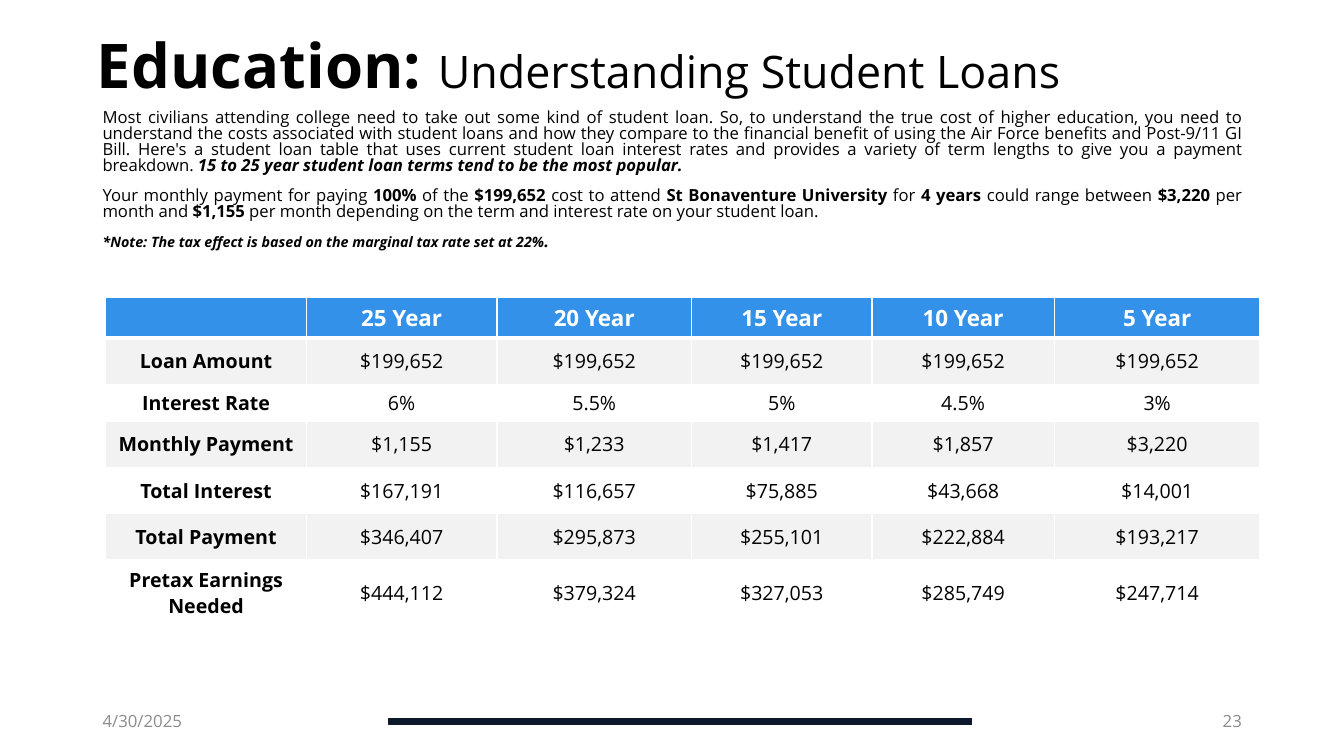
from dataclasses import dataclass

from lxml.etree import SubElement
from pptx import Presentation
from pptx.dml.color import RGBColor
from pptx.enum.shapes import MSO_SHAPE
from pptx.enum.text import MSO_ANCHOR, MSO_AUTO_SIZE, PP_ALIGN
from pptx.oxml.ns import qn
from pptx.util import Pt


@dataclass(frozen=True)
class Theme:
    font: str = "Open Sans"
    ink: str = "000000"
    paper: str = "FFFFFF"
    blue: str = "3491E9"
    band: str = "F2F2F2"
    navy: str = "0E182D"
    gray: str = "8C8C8C"
    title: float = 44
    sub: float = 32
    body: float = 11.9
    note: float = 10.2
    head: float = 16
    cell: float = 14
    foot: float = 12


THEME = Theme()
PLAIN = {"bold": False, "italic": False}
BOLD = {"bold": True, "italic": False}
STRONG = {"bold": True, "italic": True}

INTRO = [
    [
        ("Most civilians attending college need to take out some kind of student loan. "
         "So, to understand the true cost of higher education, you need to understand "
         "the costs associated with student loans and how they compare to the financial "
         "benefit of using the Air Force benefits and Post-9/11 GI Bill. Here's a student "
         "loan table that uses current student loan interest rates and provides a variety "
         "of term lengths to give you a payment breakdown. ", PLAIN, THEME.body),
        ("15 to 25 year student loan terms tend to be the most popular.", STRONG, THEME.body),
    ],
    [
        ("Your monthly payment for paying ", PLAIN, THEME.body),
        ("100%", BOLD, THEME.body),
        (" of the ", PLAIN, THEME.body),
        ("$199,652", BOLD, THEME.body),
        (" cost to attend ", PLAIN, THEME.body),
        ("St Bonaventure University", BOLD, THEME.body),
        (" for ", PLAIN, THEME.body),
        ("4 years", BOLD, THEME.body),
        (" could range between ", PLAIN, THEME.body),
        ("$3,220", BOLD, THEME.body),
        (" per month and ", PLAIN, THEME.body),
        ("$1,155", BOLD, THEME.body),
        (" per month depending on the term and interest rate on your student loan.",
         PLAIN, THEME.body),
    ],
    [
        ("*Note: The tax effect is based on the marginal tax rate set at 22%",
         STRONG, THEME.note),
        (".", STRONG, THEME.body),
    ],
]

LOANS = [
    ["", "25 Year", "20 Year", "15 Year", "10 Year", "5 Year"],
    ["Loan Amount"] + ["$199,652"] * 5,
    ["Interest Rate", "6%", "5.5%", "5%", "4.5%", "3%"],
    ["Monthly Payment", "$1,155", "$1,233", "$1,417", "$1,857", "$3,220"],
    ["Total Interest", "$167,191", "$116,657", "$75,885", "$43,668", "$14,001"],
    ["Total Payment", "$346,407", "$295,873", "$255,101", "$222,884", "$193,217"],
    ["Pretax Earnings Needed", "$444,112", "$379,324", "$327,053", "$285,749", "$247,714"],
]
WIDTHS = [143.3, 136.1, 139, 128.9, 130.3, 146.9]
HEIGHTS = [29, 33.1, 26.3, 33.1, 33.1, 33.1, 46.8]


def apply(item, form):
    for name, value in form.items():
        setattr(item, name, value)


def write(para, runs, color, form):
    apply(para, form)
    for text, look, size in runs:
        run = para.add_run()
        run.text = text
        apply(run.font, {"name": THEME.font, "size": Pt(size), **look})
        run.font.color.rgb = RGBColor.from_string(color)


def add_text(slide, box, anchor):
    frame = slide.shapes.add_textbox(*map(Pt, box)).text_frame
    apply(frame, {"word_wrap": True, "vertical_anchor": anchor})
    return frame


def add_title(slide, box):
    title = slide.shapes.title
    apply(title, dict(zip(("left", "top", "width", "height"), map(Pt, box))))
    frame = title.text_frame
    apply(frame, {"word_wrap": True, "auto_size": MSO_AUTO_SIZE.NONE,
                  "vertical_anchor": MSO_ANCHOR.MIDDLE})
    runs = [("Education: ", BOLD, THEME.title),
            ("Understanding Student Loans", PLAIN, THEME.sub)]
    write(frame.paragraphs[0], runs, THEME.ink,
          {"alignment": PP_ALIGN.LEFT, "line_spacing": 0.9})


def add_intro(slide, box):
    frame = add_text(slide, box, MSO_ANCHOR.TOP)
    for index, runs in enumerate(INTRO):
        para = frame.add_paragraph() if index else frame.paragraphs[0]
        write(para, runs, THEME.ink,
              {"alignment": PP_ALIGN.JUSTIFY, "line_spacing": 0.8,
               "space_before": Pt(10 if index else 0)})


def add_edge(cell, index, side, width):
    edge = SubElement(cell.fill._xPr, qn(f"a:ln{side}"), w=str(Pt(width)))
    fill = SubElement(edge, qn("a:solidFill"))
    SubElement(fill, qn("a:srgbClr"), val=THEME.paper)
    cell.fill._xPr.insert(index, edge)


def add_loans(slide, box):
    rows, cols = len(LOANS), len(WIDTHS)
    table = slide.shapes.add_table(rows, cols, *map(Pt, box)).table
    for col, width in zip(table.columns, WIDTHS):
        col.width = Pt(width)
    for row, height in zip(table.rows, HEIGHTS):
        row.height = Pt(height)
    for y, line in enumerate(LOANS):
        fill = THEME.blue if y == 0 else THEME.band if y % 2 else THEME.paper
        color, size = (THEME.ink, THEME.cell) if y else (THEME.paper, THEME.head)
        for x, text in enumerate(line):
            cell = table.cell(y, x)
            cell.vertical_anchor = MSO_ANCHOR.MIDDLE
            cell.fill.solid()
            cell.fill.fore_color.rgb = RGBColor.from_string(fill)
            edges = [("L", x > 0, 1), ("R", x < cols - 1, 1),
                     ("T", y > 0, 1), ("B", y < rows - 1, 1 if y else 3)]
            inner = [(side, width) for side, shown, width in edges if shown]
            for index, (side, width) in enumerate(inner):
                add_edge(cell, index, side, width)
            if text:
                look = PLAIN if x and y else BOLD
                write(cell.text_frame.paragraphs[0], [(text, look, size)], color,
                      {"alignment": PP_ALIGN.CENTER})


def add_foot(slide, box):
    left, top, width, height = box
    bar = slide.shapes.add_shape(MSO_SHAPE.RECTANGLE, Pt(left + 211.7), Pt(top + 13),
                                 Pt(416.2), Pt(4.3))
    bar.shadow.inherit = False
    bar.fill.solid()
    for paint in (bar.fill.fore_color, bar.line.color):
        paint.rgb = RGBColor.from_string(THEME.navy)
    bar.line.width = Pt(1)
    wide = 216
    for text, start, align in (("4/30/2025", left, PP_ALIGN.LEFT),
                               ("23", left + width - wide, PP_ALIGN.RIGHT)):
        frame = add_text(slide, (start, top, wide, height), MSO_ANCHOR.MIDDLE)
        write(frame.paragraphs[0], [(text, PLAIN, THEME.foot)], THEME.gray,
              {"alignment": align})


def main():
    deck = Presentation()
    apply(deck, {"slide_width": Pt(960), "slide_height": Pt(540)})
    slide = deck.slides.add_slide(deck.slide_layouts[5])
    add_title(slide, (62, 3, 831.6, 91.4))
    add_intro(slide, (66.2, 75.6, 828, 131))
    add_loans(slide, (75.6, 212.4, sum(WIDTHS), sum(HEIGHTS)))
    add_foot(slide, (66.2, 500.4, 828, 28.8))
    deck.save("out.pptx")


if __name__ == "__main__":
    main()
